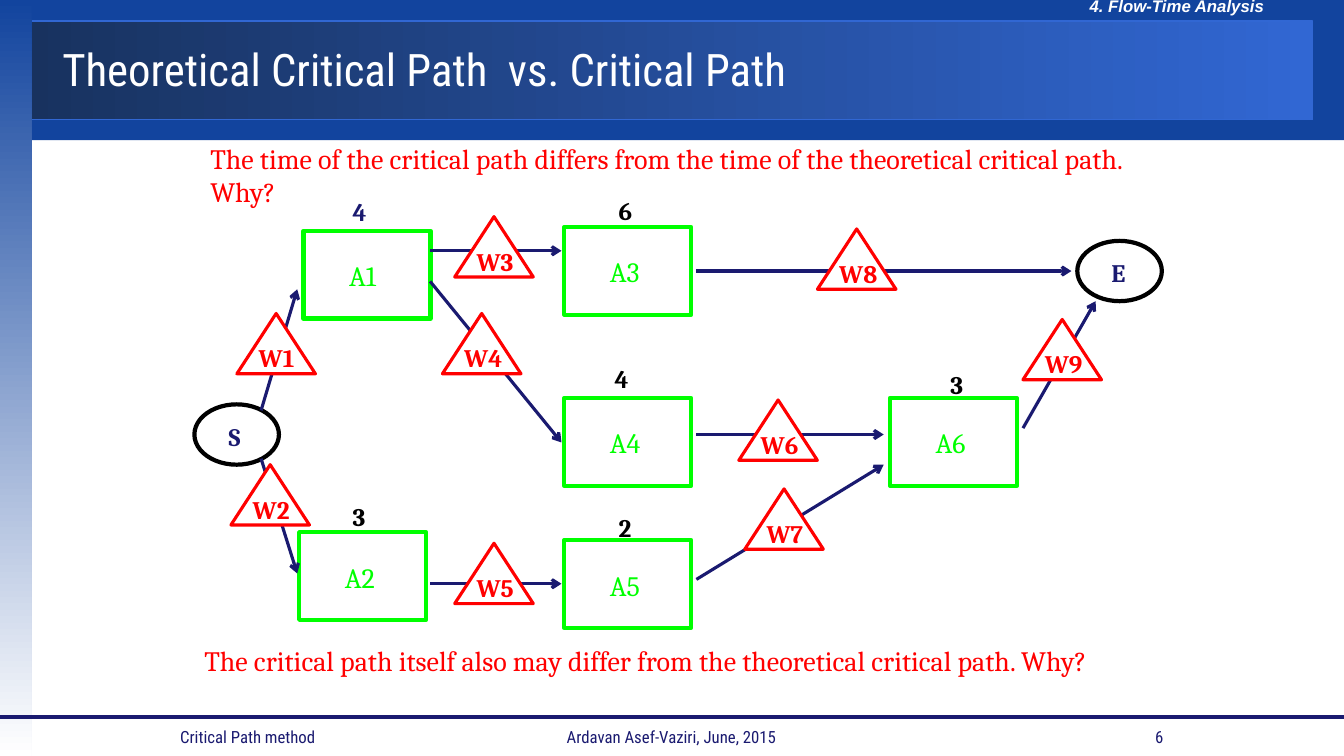
from dataclasses import dataclass
from lxml import etree
from pptx import Presentation
from pptx import util as u
from pptx.dml.color import RGBColor
from pptx.enum import shapes, text
from pptx.oxml import ns

Cm, Pt = u.Cm, u.Pt
LEFT, CENTER, RIGHT = text.PP_ALIGN.LEFT, text.PP_ALIGN.CENTER, text.PP_ALIGN.RIGHT
TOP, MIDDLE = text.MSO_ANCHOR.TOP, text.MSO_ANCHOR.MIDDLE
AUTO = shapes.MSO_SHAPE


@dataclass(frozen=True)
class Theme:
    """Colours, fonts and type sizes of the slide."""
    blue: str = "12449E"
    band_dark: str = "18325F"
    band_light: str = "3167D3"
    navy: str = "1A1A70"
    green: str = "00FF00"
    red: str = "FF0000"
    black: str = "000000"
    white: str = "FFFFFF"
    sans: str = "Roboto Condensed"
    serif: str = "Cambria"
    running: str = "Arial"
    title: int = 32
    body: int = 20
    label: int = 18
    small: int = 12


T = Theme()

TASKS = [
    ("A1", 2.75, 1.02, "4", 0.99, -0.99, T.navy),
    ("A3", 9.32, 0.92, "6", 1.12, -0.92, T.black),
    ("A4", 9.32, 5.23, "4", 1.02, -1.01, T.black),
    ("A6", 17.53, 5.23, "3", 1.27, -0.86, T.black),
    ("A5", 9.32, 8.81, "2", 1.12, -0.83, T.black),
    ("A2", 2.64, 8.61, "3", 1.1, -0.89, T.black),
]
TERMINALS = [("S", 0, 5.39), ("E", 22.25, 1.27)]
ARROWS = [
    (5.94, 1.52, 9.25, 1.52),
    (5.94, 2.29, 9.25, 6.35),
    (5.94, 9.91, 9.25, 9.91),
    (12.65, 6.15, 17.37, 6.15),
    (12.65, 9.8, 17.37, 6.91),
    (12.65, 2.03, 22.1, 2.03),
    (20.88, 5.99, 22.71, 2.79),
    (1.68, 6.76, 2.59, 9.65),
    (1.68, 5.54, 2.59, 2.49),
]
WAITS = [
    ("W1", 1.07, 3.1), ("W2", 0.92, 6.91), ("W4", 6.25, 3.1),
    ("W3", 6.56, 0.66), ("W6", 13.72, 5.28), ("W7", 13.87, 7.52),
    ("W5", 6.56, 8.89), ("W9", 20.88, 3.25), ("W8", 15.7, 0.97),
]


def rgb(color):
    """Turn a hex string into a colour."""
    return RGBColor.from_string(color)


def add_text(s, x, y, w, h, words, size, color, font=T.serif, bold=False,
             italic=False, align=LEFT, anchor=TOP):
    """Add a one-paragraph text box."""
    tf = s.shapes.add_textbox(Cm(x), Cm(y), Cm(w), Cm(h)).text_frame
    tf.word_wrap = True
    tf.vertical_anchor = anchor
    p = tf.paragraphs[0]
    p.text, p.alignment = words, align
    f = p.font
    f.name, f.size, f.bold, f.italic = font, Pt(size), bold, italic
    f.color.rgb = rgb(color)


def add_shape(s, kind, x, y, w, h, fill=None, line=None, width=0.75, angle=0):
    """Add a preset shape; a pair of fill colours makes a gradient."""
    sp = s.shapes.add_shape(kind, Cm(x), Cm(y), Cm(w), Cm(h))
    sp.shadow.inherit = False
    if fill is None:
        sp.fill.background()
    elif isinstance(fill, tuple):
        sp.fill.gradient()
        sp.fill.gradient_angle = angle
        for stop, color in zip(sp.fill.gradient_stops, fill):
            stop.color.rgb = rgb(color)
    else:
        sp.fill.solid()
        sp.fill.fore_color.rgb = rgb(fill)
    if line:
        sp.line.color.rgb = rgb(line)
        sp.line.width = Pt(width)
    else:
        sp.line.fill.background()


def add_line(s, x1, y1, x2, y2, width, arrow=False):
    """Add a straight navy connector, with an arrowhead if asked."""
    c = s.shapes.add_connector(shapes.MSO_CONNECTOR.STRAIGHT, Cm(x1), Cm(y1), Cm(x2), Cm(y2))
    c.line.color.rgb = rgb(T.navy)
    c.line.width = Pt(width)
    if arrow:
        etree.SubElement(c.line._get_or_add_ln(), ns.qn("a:tailEnd"), type="arrow")
    etree.SubElement(c._element.spPr, ns.qn("a:effectLst"))


def header(s, x, y, w, h):
    """Draw the title banner with its running head."""
    add_shape(s, AUTO.RECTANGLE, x, y, w, h, T.blue)
    add_shape(s, AUTO.RECTANGLE, x, y + 0.53, w - 0.79, 2.49,
              (T.band_dark, T.band_light), T.band_light)
    add_text(s, x + w - 6.66, y - 0.23, 6.66, 0.76, "4. Flow-Time Analysis",
             T.small, T.white, T.running, bold=True, italic=True)
    add_text(s, x + 0.66, y + 0.53, w - 1.73, 2.39,
             "Theoretical Critical Path  vs. Critical Path",
             T.title, T.white, T.sans, anchor=MIDDLE)


def side_strip(s, x, y, w, h):
    """Draw the fading strip at the slide's edge."""
    add_shape(s, AUTO.RECTANGLE, x, y, w, h, (T.blue, T.white), angle=270)


def network(s, x, y):
    """Draw tasks, terminals, arrows and waits from the given corner."""
    for name, dx, dy, time, time_dx, time_dy, color in TASKS:
        left, top = x + dx, y + dy
        add_shape(s, AUTO.RECTANGLE, left, top, 3.2, 2.21, line=T.green, width=3)
        add_text(s, left + 0.9, top + 0.58, 1.42, 1.12, name, T.body, T.green)
        add_text(s, left + time_dx, top + time_dy, 0.86, 1.02, time, T.label, color, bold=True)
    for name, dx, dy in TERMINALS:
        left, top = x + dx, y + dy
        add_shape(s, AUTO.OVAL, left, top, 2.13, 1.52, line=T.black, width=3)
        add_text(s, left + 0.61, top + 0.3, 0.94, 1.02, name, T.label, T.navy, bold=True)
    for x1, y1, x2, y2 in ARROWS:
        add_line(s, x + x1, y + y1, x + x2, y + y2, 2.25, arrow=True)
    for name, dx, dy in WAITS:
        left, top = x + dx, y + dy
        add_shape(s, AUTO.ISOSCELES_TRIANGLE, left, top, 1.98, 1.52, T.white, T.red, 2.25)
        add_text(s, left + 0.3, top + 0.61, 1.83, 1.02, name, T.label, T.red, bold=True)


def questions(s, x, y, w, h):
    """Place one question at the top and one at the bottom of the box."""
    add_text(s, x + 0.15, y, w - 0.15, 1.96,
             "The time of the critical path differs from the time of the "
             "theoretical critical path. Why?", T.body, T.red)
    add_text(s, x, y + h - 1.12, w, 1.12,
             "The critical path itself also may differ from the theoretical "
             "critical path. Why?", T.body, T.red)


def footer(s, x, y, w, h):
    """Draw the rule and the three footer texts."""
    add_line(s, x, y, x + w, y, 3)
    for dx, width, words, align in [
        (4.29, 5.92, "Critical Path method", LEFT),
        (12.9, 8.05, "Ardavan Asef-Vaziri, June, 2015", CENTER),
        (23.65, 5.92, "6", RIGHT),
    ]:
        add_text(s, x + dx, y, width, h, words, T.small, T.navy, T.sans,
                 align=align, anchor=MIDDLE)


def main():
    """Build and save the slide."""
    prs = Presentation()
    prs.slide_width, prs.slide_height = Cm(33.87), Cm(19.05)
    s = prs.slides.add_slide(prs.slide_layouts[6])
    header(s, 0.66, 0, 33.21, 3.53)
    side_strip(s, 0, 0, 0.8, 19.05)
    network(s, 4.9, 4.8)
    questions(s, 4.9, 3.43, 24.74, 13.77)
    footer(s, 0, 18.06, 33.87, 0.99)
    prs.save("out.pptx")


if __name__ == "__main__":
    main()
